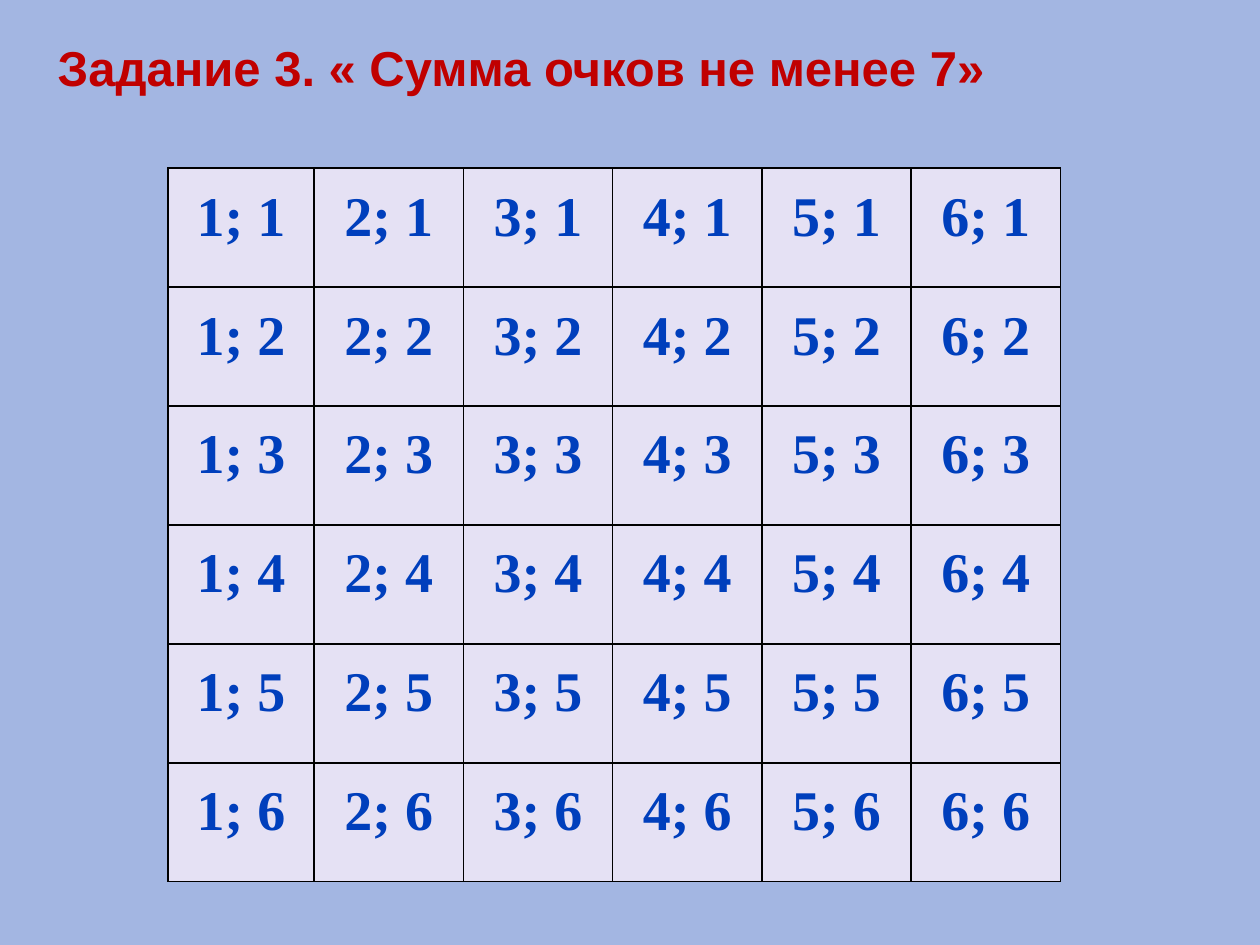
from lxml.etree import SubElement
from pptx import Presentation
from pptx.dml.color import RGBColor
from pptx.enum.text import MSO_ANCHOR, MSO_AUTO_SIZE, PP_ALIGN
from pptx.oxml.ns import qn
from pptx.util import Pt

BACKGROUND = RGBColor(0xA3, 0xB6, 0xE2)
TITLE_RED = RGBColor(0xC0, 0x00, 0x00)
CELL_FILL = RGBColor(0xE5, 0xE1, 0xF4)
CELL_BLUE = RGBColor(0x00, 0x3F, 0xBC)
BORDER = RGBColor(0x00, 0x00, 0x00)

FACES = 6
FIRST_COL, OTHER_COL, ROW = Pt(83.5), Pt(85.3), Pt(68)
MARGIN = Pt(5)


def format_run(r, font, size, color):
    r.font.name = font
    r.font.size = Pt(size)
    r.font.bold = True
    r.font.color.rgb = color


def add_title(s, text):
    sp = s.shapes.title
    sp.left, sp.top, sp.width, sp.height = Pt(18), Pt(18), Pt(622), Pt(41)
    tf = sp.text_frame
    tf.text = text
    tf.word_wrap = True
    tf.auto_size = MSO_AUTO_SIZE.SHAPE_TO_FIT_TEXT
    tf.vertical_anchor = MSO_ANCHOR.TOP
    p = tf.paragraphs[0]
    p.alignment = PP_ALIGN.LEFT
    format_run(p.runs[0], "Arial", 28, TITLE_RED)


def set_borders(cell):
    # Border lines must come before the fill in the cell properties
    tcPr = cell._tc.get_or_add_tcPr()
    for side in ("a:lnL", "a:lnR", "a:lnT", "a:lnB"):
        ln = SubElement(tcPr, qn(side), w=str(Pt(1)))
        fill = SubElement(ln, qn("a:solidFill"))
        SubElement(fill, qn("a:srgbClr"), val=str(BORDER))


def format_cell(cell, text):
    set_borders(cell)
    cell.fill.solid()
    cell.fill.fore_color.rgb = CELL_FILL
    cell.margin_left = cell.margin_right = MARGIN
    cell.margin_top = cell.margin_bottom = MARGIN
    p = cell.text_frame.paragraphs[0]
    p.text = text
    p.alignment = PP_ALIGN.CENTER
    p.line_spacing = 1.15
    p.space_after = Pt(6)
    format_run(p.runs[0], "Times New Roman", 32, CELL_BLUE)


def add_outcomes_table(s):
    width = FIRST_COL + (FACES - 1) * OTHER_COL
    table = s.shapes.add_table(FACES, FACES, Pt(96), Pt(96),
                               width, FACES * ROW).table
    table.first_row = table.horz_banding = False
    for i in range(FACES):
        table.columns[i].width = OTHER_COL if i else FIRST_COL
        table.rows[i].height = ROW
    # Column gives the first die, row the second
    for row in range(FACES):
        for col in range(FACES):
            format_cell(table.cell(row, col), f"{col + 1}; {row + 1}")


def main():
    prs = Presentation()
    prs.slide_width, prs.slide_height = Pt(720), Pt(540)
    s = prs.slides.add_slide(prs.slide_layouts[5])
    s.background.fill.solid()
    s.background.fill.fore_color.rgb = BACKGROUND

    # Heading and the table of two-dice outcomes
    add_title(s, " Задание 3. « Сумма очков не менее 7»")
    add_outcomes_table(s)
    prs.save("out.pptx")


if __name__ == "__main__":
    main()
